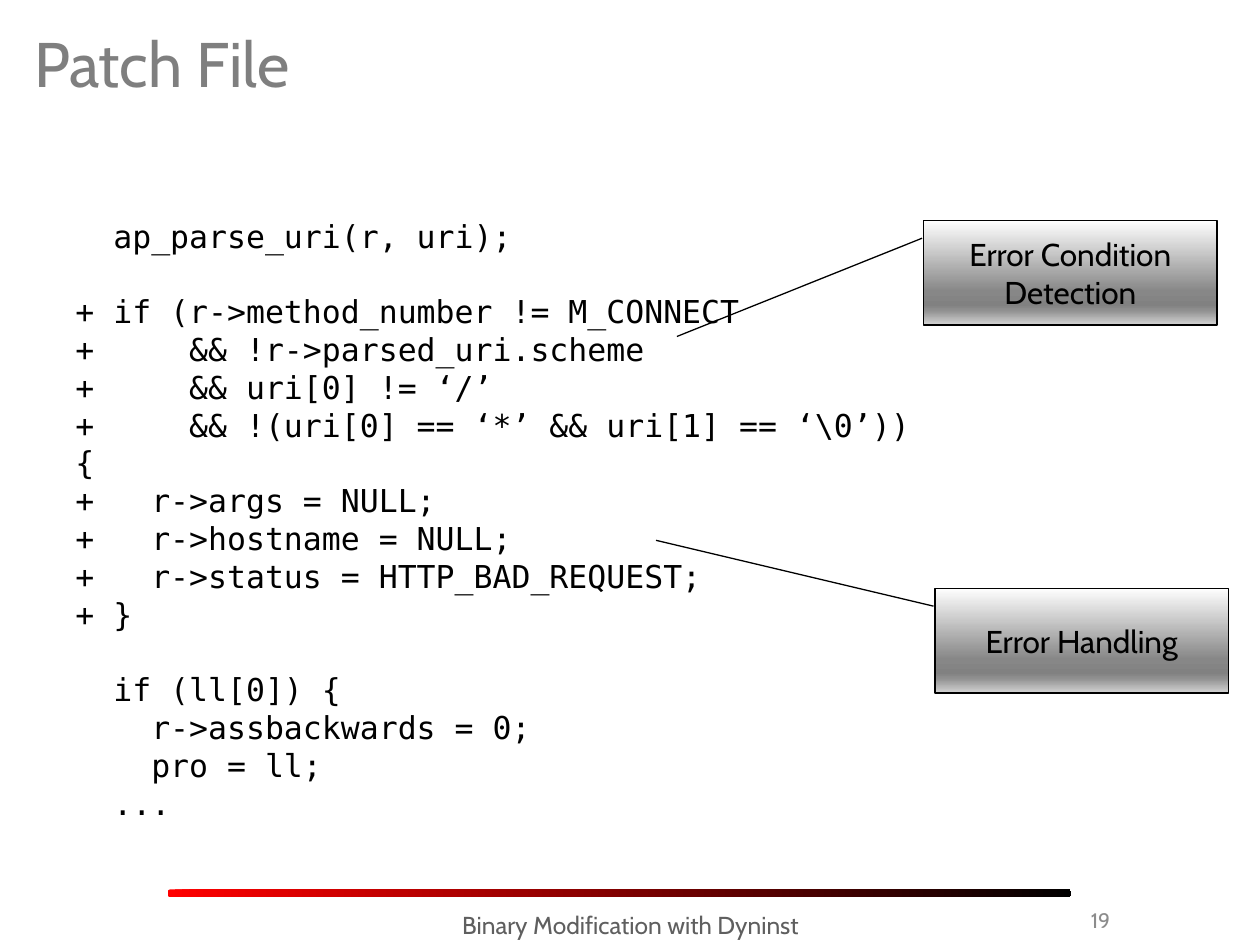
from lxml.etree import SubElement
from pptx import Presentation
from pptx.dml.color import RGBColor
from pptx.enum.shapes import MSO_SHAPE
from pptx.enum.text import MSO_ANCHOR, PP_ALIGN
from pptx.oxml.ns import qn
from pptx.util import Inches, Pt

BLACK = RGBColor(0x00, 0x00, 0x00)
TITLE_GRAY = RGBColor(0x7F, 0x7F, 0x7F)
NUMBER_GRAY = RGBColor(0x8C, 0x8C, 0x8C)
FOOTER_GRAY = RGBColor(0x5F, 0x5F, 0x5F)
BAR_STOPS = [(0, RGBColor(0xFF, 0x00, 0x00)), (100, BLACK)]
METAL_STOPS = [
    (0, RGBColor(0xFE, 0xFE, 0xFE)),
    (68, RGBColor(0x87, 0x87, 0x87)),
    (81, RGBColor(0x81, 0x81, 0x81)),
    (86, RGBColor(0x90, 0x90, 0x90)),
    (100, RGBColor(0xD3, 0xD3, 0xD3)),
]
SANS, MONO = "Cabin", "DejaVu Sans Mono"
CODE_LEADING = Pt(21.6)

TITLE = "Patch File"
FOOTER = "Binary Modification with Dyninst"
NUMBER = "19"
# Blocks of code, set apart by one empty line
CODE_BLOCKS = [
    ["  ap_parse_uri(r, uri);"],
    [
        "+ if (r->method_number != M_CONNECT",
        "+     && !r->parsed_uri.scheme",
        "+     && uri[0] != ‘/’",
        "+     && !(uri[0] == ‘*’ && uri[1] == ‘\\0’)) {",
        "+   r->args = NULL;",
        "+   r->hostname = NULL;",
        "+   r->status = HTTP_BAD_REQUEST;",
        "+ }",
    ],
    [
        "  if (ll[0]) {",
        "    r->assbackwards = 0;",
        "    pro = ll;",
        "  ...",
    ],
]
# Text, left, top, and the pointer's end as (y, x) fractions of the box
CALLOUTS = [
    ("Error Condition\nDetection", 7.33, 1.75, (1.11, -0.84)),
    ("Error Handling", 7.42, 4.67, (-0.46, -0.95)),
]
CALLOUT_SIZE = (2.33, 0.83)
POINTER_START = (0.17, -0.005)


def style_text(tf, size, color, font=SANS, align=PP_ALIGN.LEFT,
               anchor=MSO_ANCHOR.MIDDLE):
    tf.word_wrap = True
    tf.vertical_anchor = anchor
    for p in tf.paragraphs:
        p.alignment = align
        for r in p.runs:
            r.font.name, r.font.size = font, Pt(size)
            r.font.color.rgb = color


def add_text(s, box, text, *style, **options):
    tf = s.shapes.add_textbox(*map(Inches, box)).text_frame
    tf.text = text
    style_text(tf, *style, **options)
    return tf


def add_gradient_shape(s, kind, box, stops, angle):
    sp = s.shapes.add_shape(kind, *map(Inches, box))
    sp.shadow.inherit = False
    sp.fill.gradient()
    sp.fill.gradient_angle = angle
    stop_list = sp.element.spPr.find(qn("a:gradFill")).find(qn("a:gsLst"))
    stop_list.clear()
    for percent, color in stops:
        gs = SubElement(stop_list, qn("a:gs"), pos=str(percent * 1000))
        SubElement(gs, qn("a:srgbClr"), val=str(color))
    return sp


def add_code(s):
    lines = [line for block in CODE_BLOCKS for line in block]
    tf = add_text(s, (0.5, 1.67, 6.92, 4.64), "\n".join(lines), 18, BLACK,
                  font=MONO, anchor=MSO_ANCHOR.TOP)
    block_starts = [block[0] for block in CODE_BLOCKS[1:]]
    for p in tf.paragraphs:
        p.line_spacing = CODE_LEADING
        if p.text in block_starts:
            p.space_before = CODE_LEADING


def add_callout(s, text, left, top, pointer_end):
    sp = add_gradient_shape(s, MSO_SHAPE.LINE_CALLOUT_1,
                            (left, top, *CALLOUT_SIZE), METAL_STOPS, 270)
    for i, value in enumerate(POINTER_START + pointer_end):
        sp.adjustments[i] = value
    sp.line.color.rgb = BLACK
    sp.line.width = Pt(0.75)
    sp.text_frame.text = text
    style_text(sp.text_frame, 18, BLACK, align=PP_ALIGN.CENTER)


def main():
    prs = Presentation()
    prs.slide_width, prs.slide_height = Inches(10), Inches(7.5)
    s = prs.slides.add_slide(prs.slide_layouts[5])

    bar = add_gradient_shape(s, MSO_SHAPE.ROUNDED_RECTANGLE,
                             (1.33, 7.06, 7.17, 0.06), BAR_STOPS, 0)
    bar.adjustments[0] = 0.33
    bar.line.fill.background()

    title = s.shapes.title
    title.left, title.top = Inches(0.17), Inches(0.08)
    title.width, title.height = Inches(9.67), Inches(0.83)
    title.text_frame.text = TITLE
    style_text(title.text_frame, 36, TITLE_GRAY)

    add_text(s, (7.58, 7.1, 1.33, 0.4), NUMBER, 12, NUMBER_GRAY,
             align=PP_ALIGN.RIGHT)
    add_text(s, (2.42, 7.17, 5.17, 0.4), FOOTER, 14, FOOTER_GRAY,
             align=PP_ALIGN.CENTER, anchor=MSO_ANCHOR.TOP)
    add_code(s)
    for callout in CALLOUTS:
        add_callout(s, *callout)

    prs.save("out.pptx")


if __name__ == "__main__":
    main()
